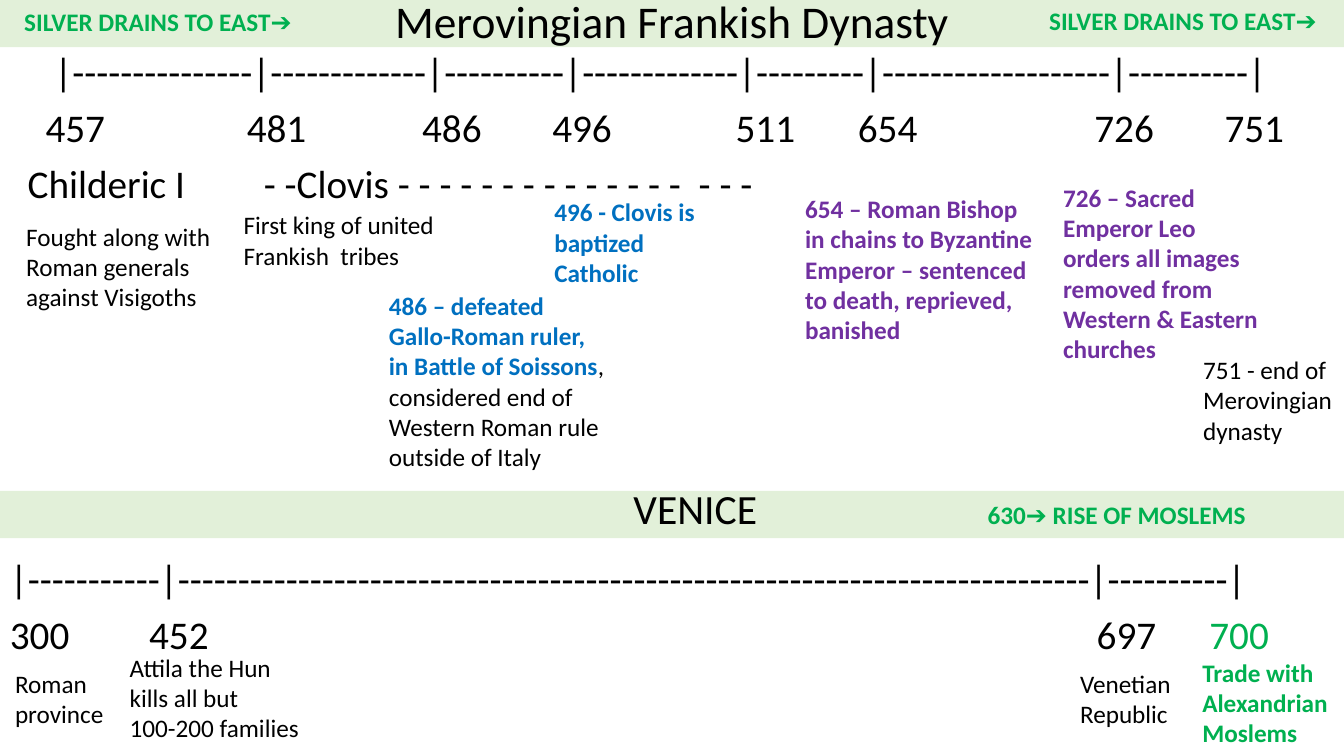
from pptx import Presentation
from pptx import util as u
from pptx.dml.color import RGBColor
from pptx.enum import shapes, text

BLACK, BLUE, GREEN, PURPLE = "000000", "0070C0", "00B050", "7030A0"
BAND = "E2F0D9"
PAGE_WIDTH, PAGE_HEIGHT = 33.87, 19.05
BAND_HEIGHT = 1.19
ROW_PITCH, ROW_HEIGHT = 1.42, 1.08
NOTE_LINE, INSET_X, INSET_Y = 0.76, 0.25, 0.13


def colour(code):
    return RGBColor.from_string(code)


def write(frame, lines, size=18, bold=False, align=text.PP_ALIGN.LEFT, spacing=1.0):
    for index, spans in enumerate(lines):
        para = frame.paragraphs[0] if index == 0 else frame.add_paragraph()
        para.alignment = align
        para.line_spacing = spacing
        for words, code in spans:
            span = para.add_run()
            span.text = words
            span.font.name = "Calibri"
            span.font.size = u.Pt(size)
            span.font.bold = bold and code != BLACK
            span.font.color.rgb = colour(code)


def add_band(page, top, title, size, spacing, shift):
    band = page.shapes.add_shape(shapes.MSO_SHAPE.RECTANGLE, 0, u.Cm(top),
                                 u.Cm(PAGE_WIDTH), u.Cm(BAND_HEIGHT))
    band.shadow.inherit = False
    band.fill.solid()
    band.fill.fore_color.rgb = colour(BAND)
    band.line.fill.background()
    frame = band.text_frame
    frame.margin_left = u.Cm(INSET_X + shift)
    frame.vertical_anchor = text.MSO_ANCHOR.MIDDLE
    write(frame, [[(title, BLACK)]], size, align=text.PP_ALIGN.CENTER, spacing=spacing)


def add_label(page, left, top, width, words, code=BLACK):
    box = page.shapes.add_textbox(u.Cm(left), u.Cm(top), u.Cm(width), u.Cm(ROW_HEIGHT))
    frame = box.text_frame
    frame.word_wrap = True
    frame.margin_left = frame.margin_right = frame.margin_top = frame.margin_bottom = 0
    write(frame, [[(words, code)]], 28, spacing=0.9)


def add_note(page, left, top, width, lines, code=BLACK):
    lines = [[(line, code)] if isinstance(line, str) else line for line in lines]
    height = len(lines) * NOTE_LINE + 2 * INSET_Y
    box = page.shapes.add_textbox(u.Cm(left), u.Cm(top), u.Cm(width), u.Cm(height))
    frame = box.text_frame
    frame.word_wrap = False
    write(frame, lines, bold=True)


def add_timeline(page, top, band, row_top, bar_left, dashes, labels, notes):
    add_band(page, top, *band)
    bars = "|" + "".join("-" * count + "|" for count in dashes)
    add_label(page, bar_left, top + row_top, PAGE_WIDTH - bar_left, bars)
    for row, left, width, *label in labels:
        add_label(page, left, top + row_top + row * ROW_PITCH, width, *label)
    for left, note_top, width, *note in notes:
        add_note(page, left, top + note_top, width, *note)


def add_years(years):
    return [(1, left, 2, *year) for left, *year in years]


def add_franks(page):
    years = [(1.15, "457"), (6.22, "481"), (10.64, "486"), (13.92, "496"),
             (18.54, "511"), (21.62, "654"), (27.58, "726"), (30.86, "751")]
    reigns = [(2, 0.7, 5, "Childeric I"),
              (2, 6.65, 14, "- -Clovis " + "- " * 14 + " - - -")]
    silver = ["SILVER DRAINS TO EAST➔"]
    notes = [
        (0.36, 0.03, 7.47, silver, GREEN),
        (26.19, 0, 7.47, silver, GREEN),
        (0.41, 5.44, 5.21, ["Fought along with", "Roman generals", "against Visigoths"]),
        (5.89, 5.16, 5.36, ["First king of united", "Frankish  tribes"]),
        (9.55, 7.19, 6.02, ["486 – defeated", "Gallo-Roman ruler,",
                            [("in Battle of Soissons", BLUE), (",", BLACK)],
                            [("considered end of", BLACK)],
                            [("Western Roman rule", BLACK)],
                            [("outside of Italy", BLACK)]], BLUE),
        (13.72, 4.83, 4.09, ["496 - Clovis is", "baptized", "Catholic"], BLUE),
        (20.04, 4.75, 6.48, ["654 – Roman Bishop", "in chains to Byzantine",
                             "Emperor – sentenced", "to death, reprieved,",
                             "banished"], PURPLE),
        (26.54, 4.47, 5.46, ["726 – Sacred", "Emperor Leo", "orders all images",
                             "removed from", "Western & Eastern", "churches"], PURPLE),
        (30.07, 8.81, 3.81, ["751 - end of", "Merovingian", "dynasty"]),
    ]
    add_timeline(page, 0, ("Merovingian Frankish Dynasty", 32.4, 0.9, 0), 1.32, 1.37,
                 (15, 13, 10, 13, 9, 19, 10), add_years(years) + reigns, notes)


def add_venice(page):
    years = [(0.25, "300"), (3.76, "452"), (27.64, "697"), (30.48, "700", GREEN)]
    notes = [
        (24.64, 0.1, 7.2, ["630➔ RISE OF MOSLEMS"], GREEN),
        (0.13, 4.34, 2.77, ["Roman", "province"]),
        (3.02, 3.94, 4.83, ["Attila the Hun", "kills all but", "100-200 families"]),
        (26.97, 4.34, 2.82, ["Venetian", "Republic"]),
        (30.05, 4.06, 3.68, ["Trade with", "Alexandrian", "Moslems"], GREEN),
    ]
    add_timeline(page, 12.37, ("VENICE", 29.7, 0.7, 1.18), 1.73, 0.25,
                 (11, 76, 10), add_years(years), notes)


def main():
    deck = Presentation()
    deck.slide_width, deck.slide_height = u.Cm(PAGE_WIDTH), u.Cm(PAGE_HEIGHT)
    page = deck.slides.add_slide(deck.slide_layouts[6])
    add_franks(page)
    add_venice(page)
    deck.save("out.pptx")


if __name__ == "__main__":
    main()
